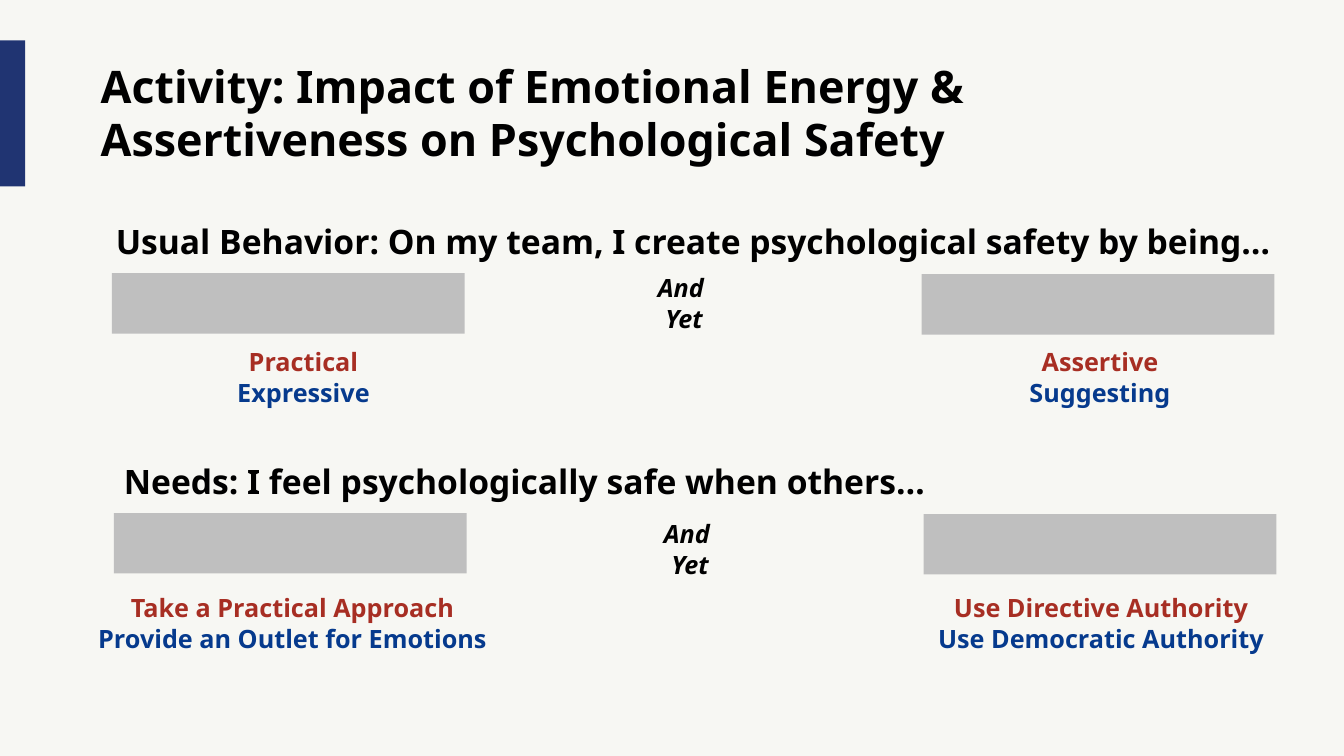
from pptx import Presentation
from pptx.dml.color import RGBColor
from pptx.enum.shapes import MSO_SHAPE
from pptx.enum.text import MSO_ANCHOR, PP_ALIGN
from pptx.util import Inches, Pt

RECT = MSO_SHAPE.RECTANGLE
TOP, MIDDLE = MSO_ANCHOR.TOP, MSO_ANCHOR.MIDDLE
LEFT, CENTER = PP_ALIGN.LEFT, PP_ALIGN.CENTER
BLACK, RED, BLUE = "000000", "A72E23", "063A8D"
NAVY, GRAY, CREAM = "203472", "BFBFBF", "F7F7F3"

deck = Presentation()
deck.slide_width, deck.slide_height = Inches(13.33), Inches(7.5)
slide = deck.slides.add_slide(deck.slide_layouts[6])


def paint(fill, color):
    fill.solid()
    fill.fore_color.rgb = RGBColor.from_string(color)


def add_text(box, lines, size, align=LEFT, anchor=TOP, italic=False):
    """Add a text box; lines holds (text, color) pairs, one per paragraph."""
    frame = slide.shapes.add_textbox(*map(Inches, box)).text_frame
    frame.word_wrap = True
    frame.vertical_anchor = anchor
    style = {"name": "Noto Sans", "size": Pt(size), "bold": True, "italic": italic}
    for i, (text, color) in enumerate(lines):
        para = frame.add_paragraph() if i else frame.paragraphs[0]
        para.alignment = align
        run = para.add_run()
        run.text = text
        for key, value in style.items():
            setattr(run.font, key, value)
        paint(run.font.fill, color)


paint(slide.background.fill, CREAM)

title = [("Activity: Impact of Emotional Energy &", BLACK),
         ("Assertiveness on Psychological Safety", BLACK)]
add_text((0.9, 0.53, 11.76, 1.18), title, 32)

# Heading, its box, left of first blank, top of first blank, "And Yet" place,
# top of choices, then (center, red choice, blue choice) for each side
sections = [
    ("Usual Behavior: On my team, I create psychological safety by being…",
     (1.05, 2.14, 12.2, 0.5), 1.11, 2.71, (4.85, 2.69), 3.39,
     [(3.01, "Practical", "Expressive"),
      (10.91, "Assertive", "Suggesting")]),
    ("Needs: I feel psychologically safe when others…",
     (1.13, 4.52, 10.36, 0.5), 1.13, 5.09, (4.91, 5.13), 5.83,
     [(2.9, "Take a Practical Approach", "Provide an Outlet for Emotions"),
      (10.92, "Use Directive Authority", "Use Democratic Authority")]),
]

bars = [(0, 0.4, 0.25, 1.45, NAVY)]
wide = 4.8
for heading, box, left, top, link, low, sides in sections:
    add_text(box, [(heading, BLACK)], 24)
    bars += [(left, top, 3.5, 0.6, GRAY), (left + 8.03, top + 0.01, 3.5, 0.6, GRAY)]
    add_text((*link, 3.87, 0.63), [("And ", BLACK), ("Yet", BLACK)],
             18, CENTER, MIDDLE, True)
    for center, first, second in sides:
        add_text((center - wide / 2, low, wide, 0.71),
                 [(first, RED), (second, BLUE)], 18, CENTER)

for *box, color in bars:
    bar = slide.shapes.add_shape(RECT, *map(Inches, box))
    bar.shadow.inherit = False
    paint(bar.fill, color)
    bar.line.fill.background()

deck.save("out.pptx")
